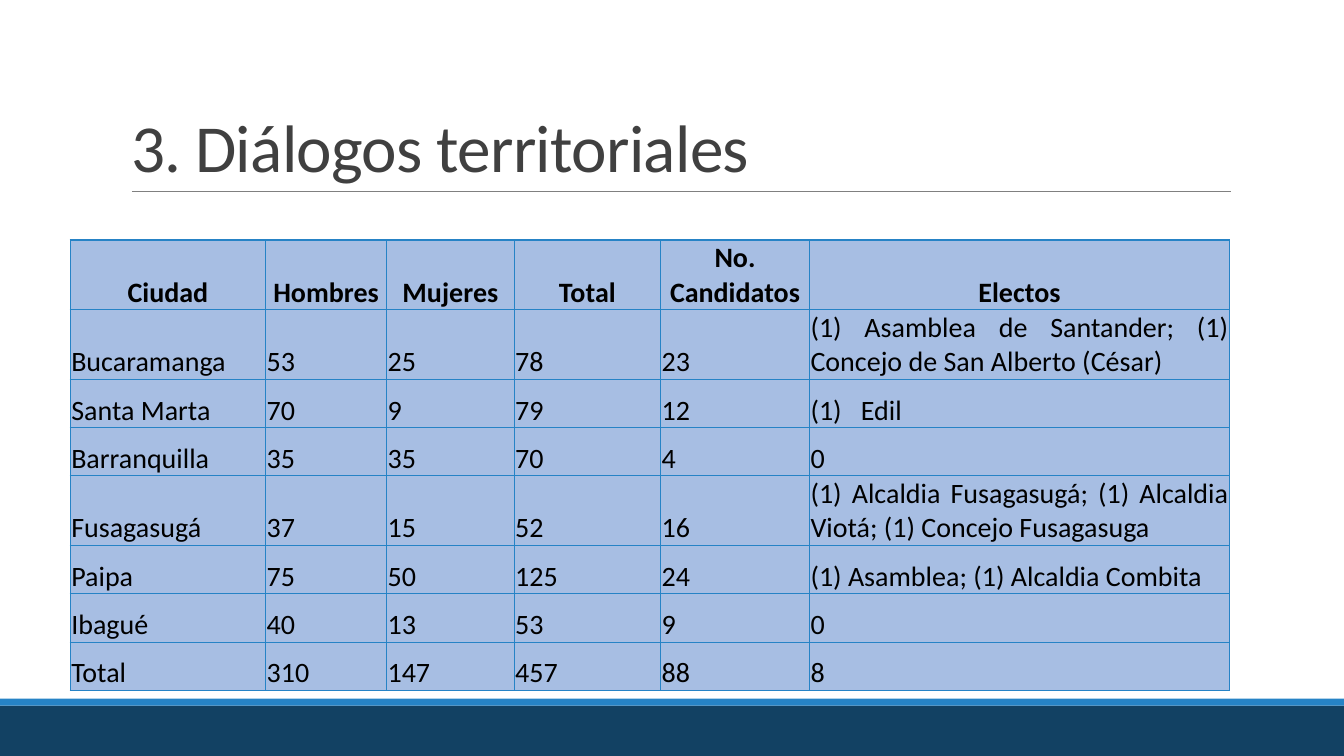
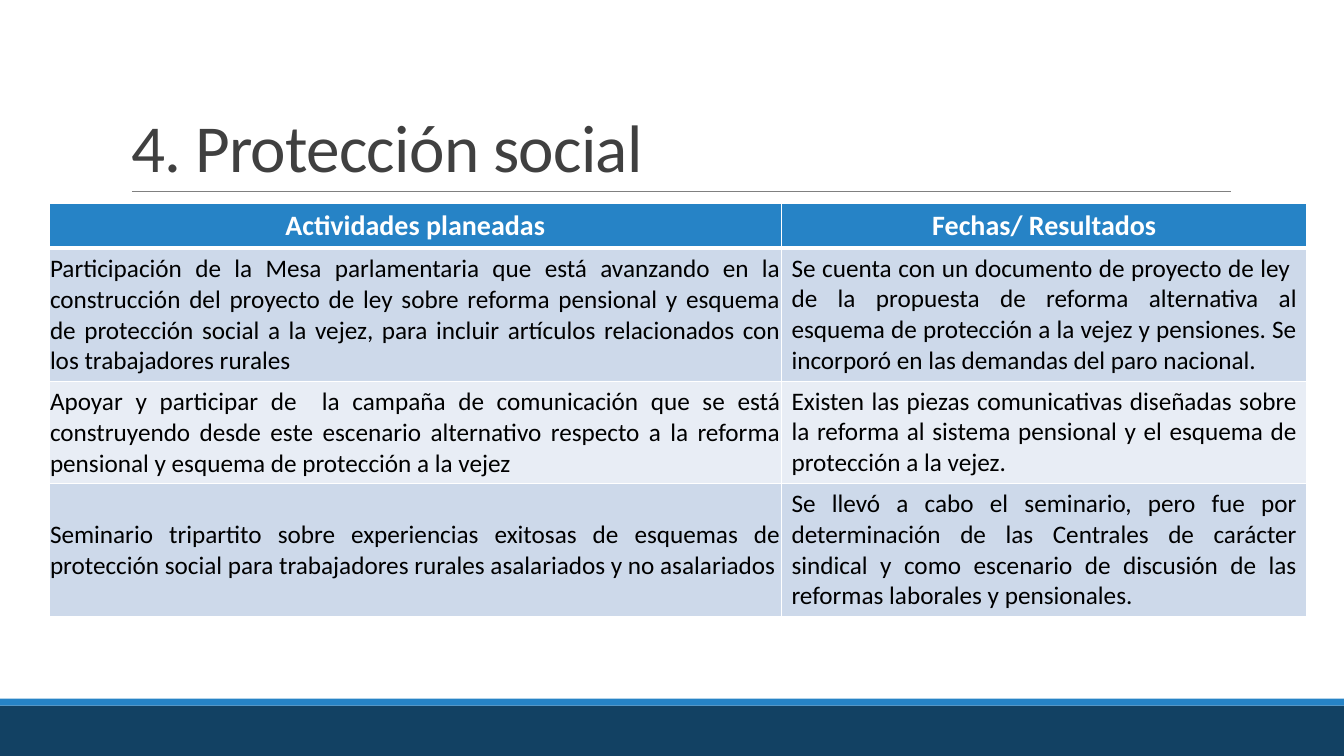
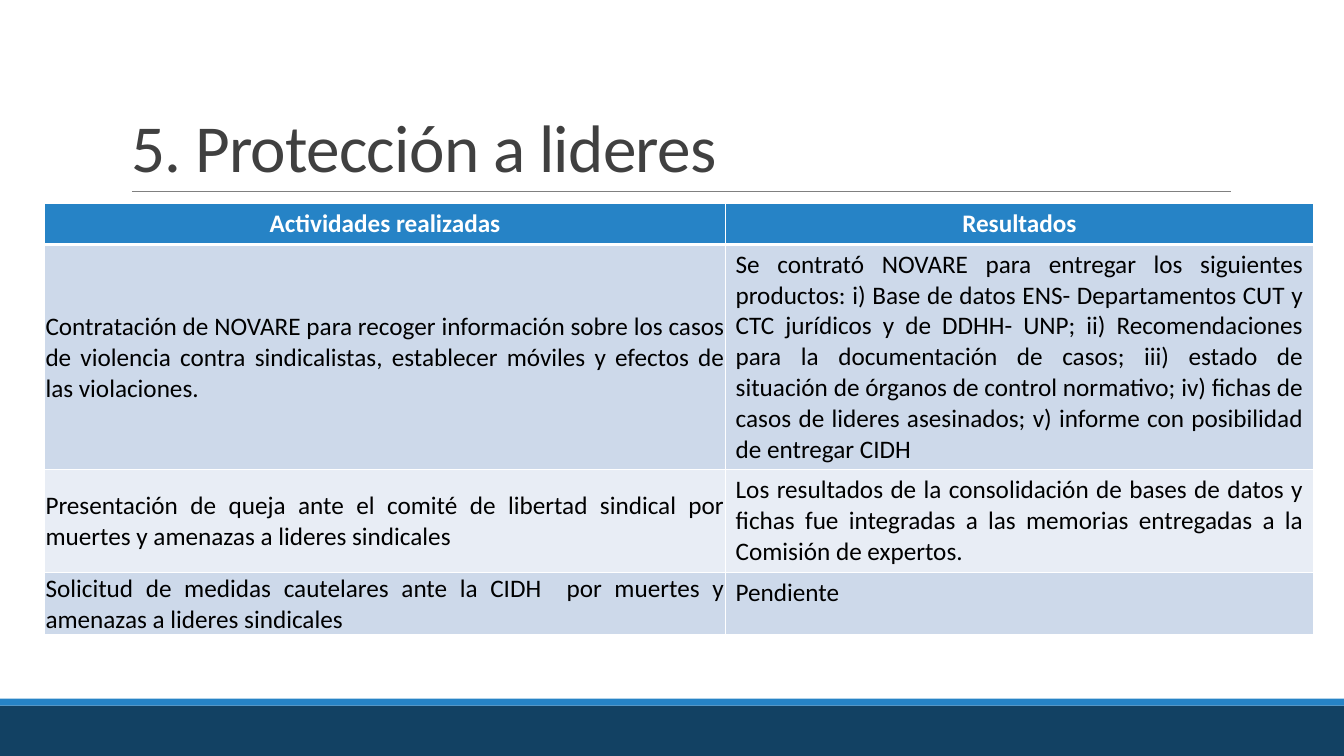
from dataclasses import dataclass

from lxml import etree
from pptx import Presentation
from pptx.dml.color import RGBColor
from pptx.enum.shapes import MSO_CONNECTOR, MSO_SHAPE
from pptx.enum.text import MSO_ANCHOR, MSO_AUTO_SIZE, PP_ALIGN
from pptx.oxml.ns import qn
from pptx.util import Pt

RECTANGLE = MSO_SHAPE.RECTANGLE
STRAIGHT = MSO_CONNECTOR.STRAIGHT
TOP, MIDDLE, BOTTOM = MSO_ANCHOR.TOP, MSO_ANCHOR.MIDDLE, MSO_ANCHOR.BOTTOM
LEFT, CENTER, JUSTIFY = PP_ALIGN.LEFT, PP_ALIGN.CENTER, PP_ALIGN.JUSTIFY
NO_AUTOFIT = MSO_AUTO_SIZE.NONE
TITLE_ONLY = 5


@dataclass(frozen=True)
class Theme:
    font: str = "Calibri"
    navy: str = "124163"
    blue: str = "2683C6"
    rule: str = "808080"
    title: str = "404040"
    text: str = "000000"
    white: str = "FFFFFF"
    sky: str = "A7BEE3"
    band_dark: str = "CDD9EA"
    band_light: str = "E8EDF5"
    title_size: float = 48
    large: float = 20
    body: float = 18
    line_height: float = 1.22


THEME = Theme()
PAGE = (960, 540)
TITLE_BOX = (86.4, 22.6, 792, 114.2)
TIGHT = (0.72, 0.72, 0.72, 0)
ROOMY = (7.2, 3.6, 7.2, 3.6)

DIALOGUES = [
    ("Ciudad", "Hombres", "Mujeres", "Total", "No. Candidatos", "Electos"),
    ("Bucaramanga", "53", "25", "78", "23",
     "(1) Asamblea de Santander; (1) Concejo de San Alberto (César)"),
    ("Santa Marta", "70", "9", "79", "12", "Edil"),
    ("Barranquilla", "35", "35", "70", "4", "0"),
    ("Fusagasugá", "37", "15", "52", "16",
     "(1) Alcaldia Fusagasugá; (1) Alcaldia Viotá; (1) Concejo Fusagasuga"),
    ("Paipa", "75", "50", "125", "24", "(1) Asamblea; (1) Alcaldia Combita"),
    ("Ibagué", "40", "13", "53", "9", "0"),
    ("Total", "310", "147", "457", "88", "8"),
]
DIALOGUE_COLUMNS = (139.6, 86.4, 91.1, 104.6, 106.4, 300)
DIALOGUE_ROWS = [49.5 if row in (0, 1, 4) else 34.5 for row in range(len(DIALOGUES))]
NUMBERED_CELL = (2, 5)

SOCIAL_PROTECTION = [
    ("Actividades planeadas", "Fechas/ Resultados"),
    ("Participación de la Mesa parlamentaria que está avanzando en la construcción del "
     "proyecto de ley sobre reforma pensional y esquema de protección social a la vejez, "
     "para incluir artículos relacionados con los trabajadores rurales",
     "Se cuenta con un documento de proyecto de ley  de la propuesta de reforma "
     "alternativa al esquema de protección a la vejez y pensiones. Se incorporó en las "
     "demandas del paro nacional."),
    ("Apoyar y participar de  la campaña de comunicación que se está construyendo desde "
     "este escenario alternativo respecto a la reforma pensional y esquema de protección "
     "a la vejez",
     "Existen las piezas comunicativas diseñadas sobre la reforma al sistema pensional y "
     "el esquema de protección a la vejez."),
    ("Seminario tripartito sobre experiencias exitosas de esquemas de protección social "
     "para trabajadores rurales asalariados y no asalariados",
     "Se llevó a cabo el seminario, pero fue por determinación de las Centrales de "
     "carácter sindical y como escenario de discusión de las reformas laborales y "
     "pensionales."),
]

LEADER_PROTECTION = [
    ("Actividades realizadas", "Resultados"),
    ("Contratación de NOVARE para recoger información sobre los casos de violencia contra "
     "sindicalistas, establecer móviles y efectos de las violaciones.",
     "Se contrató NOVARE para entregar los siguientes productos: i) Base de datos ENS- "
     "Departamentos CUT y CTC jurídicos y de DDHH- UNP; ii) Recomendaciones para la "
     "documentación de casos; iii) estado de situación de órganos de control normativo; "
     "iv) fichas de casos de lideres asesinados; v) informe con posibilidad de entregar "
     "CIDH"),
    ("Presentación de queja ante el comité de libertad sindical por muertes y amenazas a "
     "lideres sindicales",
     "Los resultados de la consolidación de bases de datos y fichas fue integradas a las "
     "memorias entregadas a la Comisión de expertos."),
    ("Solicitud de medidas cautelares ante la CIDH  por muertes y amenazas a lideres "
     "sindicales",
     "Pendiente"),
]


def rgb(color):
    return RGBColor.from_string(color)


def points(*lengths):
    return [Pt(length) for length in lengths]


def format_run(run, size, color, bold=False):
    run.font.name = THEME.font
    run.font.size = Pt(size)
    run.font.bold = bold
    run.font.color.rgb = rgb(color)


def add_band(slide, top, height, color):
    band = slide.shapes.add_shape(RECTANGLE, *points(0, top, PAGE[0], height))
    band.shadow.inherit = False
    band.fill.solid()
    band.fill.fore_color.rgb = rgb(color)
    band.line.fill.background()
    return band


def add_title_rule(slide):
    rule = slide.shapes.add_connector(STRAIGHT, *points(94.3, 136.8, 879.1, 136.8))
    rule.line.color.rgb = rgb(THEME.rule)
    rule.line.width = Pt(0.5)
    etree.SubElement(rule.element.spPr, qn("a:effectLst"))
    return rule


def decorate_layout(layout, slide):
    for placeholder in list(layout.placeholders):
        if placeholder.placeholder_format.idx != 0:
            layout.shapes.element.remove(placeholder.element)
    for part in (add_band(slide, 504, 36, THEME.navy),
                 add_band(slide, 499, 5, THEME.blue),
                 add_title_rule(slide)):
        layout.shapes.element.append(part.element)


def fill_title(slide, wording, box):
    title = slide.shapes.title
    title.left, title.top, title.width, title.height = points(*box)
    frame = title.text_frame
    frame.text = wording
    frame.auto_size = NO_AUTOFIT
    frame.word_wrap = True
    frame.vertical_anchor = BOTTOM
    paragraph = frame.paragraphs[0]
    paragraph.alignment = LEFT
    paragraph.line_spacing = 0.85
    run = paragraph.runs[0]
    format_run(run, THEME.title_size, THEME.title)
    run.font._element.set("spc", "-50")


def draw_borders(cell, color, widths):
    properties = cell._tc.get_or_add_tcPr()
    for side, width in zip("LRTB", widths):
        border = etree.SubElement(properties, qn(f"a:ln{side}"), w=str(Pt(width)))
        paint = etree.SubElement(border, qn("a:solidFill"))
        etree.SubElement(paint, qn("a:srgbClr"), val=color)


def fill_cell(cell, wording, size, color, bold, alignment, anchor, insets):
    cell.text_frame.text = wording
    cell.vertical_anchor = anchor
    (cell.margin_left, cell.margin_top,
     cell.margin_right, cell.margin_bottom) = points(*insets)
    paragraph = cell.text_frame.paragraphs[0]
    paragraph.alignment = alignment
    format_run(paragraph.runs[0], size, color, bold)


def paint_cell(cell, color):
    cell.fill.solid()
    cell.fill.fore_color.rgb = rgb(color)


def add_grid(slide, origin, columns, rows):
    frame = slide.shapes.add_table(len(rows), len(columns),
                                   *points(*origin, sum(columns), sum(rows)))
    grid = frame.table
    grid.horz_banding = False
    for column, width in zip(grid.columns, columns):
        column.width = Pt(width)
    for row, height in zip(grid.rows, rows):
        row.height = Pt(height)
    return grid


def number_paragraph(paragraph):
    properties = paragraph._p.get_or_add_pPr()
    properties.set("marL", str(Pt(36)))
    properties.set("indent", str(-Pt(36)))
    etree.SubElement(properties, qn("a:buFont"), typeface="+mj-lt")
    etree.SubElement(properties, qn("a:buAutoNum"), type="arabicParenBoth")


def add_dialogue_table(slide, origin):
    grid = add_grid(slide, origin, DIALOGUE_COLUMNS, DIALOGUE_ROWS)
    for row, entries in enumerate(DIALOGUES):
        header = row == 0
        for column, wording in enumerate(entries):
            cell = grid.cell(row, column)
            fill_cell(cell, wording, THEME.large, THEME.text, header,
                      CENTER if header else JUSTIFY, BOTTOM, TIGHT)
            draw_borders(cell, THEME.blue, (1, 1, 1, 1))
            paint_cell(cell, THEME.sky)
    number_paragraph(grid.cell(*NUMBERED_CELL).text_frame.paragraphs[0])


def add_activity_table(slide, origin, columns, activities, header_size, body_heights):
    header_height = header_size * THEME.line_height + 7.2
    grid = add_grid(slide, origin, columns, [header_height, *body_heights])
    for row, entries in enumerate(activities):
        header = row == 0
        band = THEME.blue if header else (THEME.band_light, THEME.band_dark)[row % 2]
        for column, wording in enumerate(entries):
            cell = grid.cell(row, column)
            if header:
                fill_cell(cell, wording, header_size, THEME.white, True,
                          CENTER, TOP, ROOMY)
            else:
                anchor, insets = ((MIDDLE, TIGHT), (TOP, ROOMY))[column]
                fill_cell(cell, wording, THEME.body, THEME.text, False,
                          JUSTIFY, anchor, insets)
            draw_borders(cell, THEME.white,
                         (1, 1, 3 if row == 1 else 1, 3 if header else 1))
            paint_cell(cell, band)


def main():
    deck = Presentation()
    deck.slide_width, deck.slide_height = points(*PAGE)
    layout = deck.slide_layouts[TITLE_ONLY]
    titles = ("3. Diálogos territoriales", "4. Protección social",
              "5. Protección a lideres")
    slides = [deck.slides.add_slide(layout) for _ in titles]
    decorate_layout(layout, slides[0])
    for slide, wording in zip(slides, titles):
        fill_title(slide, wording, TITLE_BOX)
    dialogues, social, leaders = slides
    add_dialogue_table(dialogues, (50.2, 171.5))
    add_activity_table(social, (35, 145.4), (523.2, 375.4), SOCIAL_PROTECTION,
                       THEME.large, (95, 73, 95))
    add_activity_table(leaders, (31.8, 145.4), (486.5, 419.8), LEADER_PROTECTION,
                       THEME.body, (161, 73, 44.5))
    deck.save("out.pptx")


if __name__ == "__main__":
    main()
